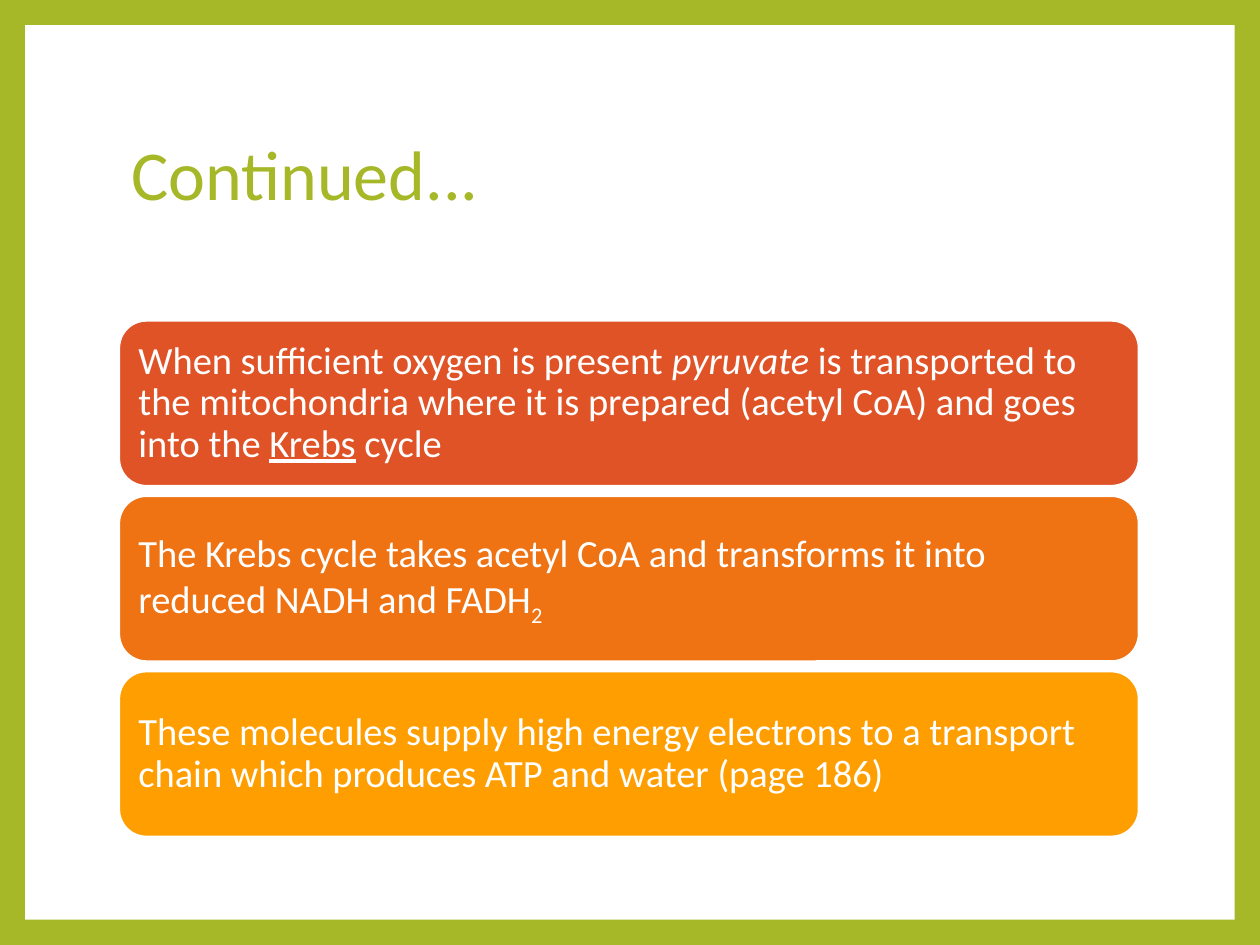
from pptx import Presentation
from pptx.dml.color import RGBColor
from pptx.enum.shapes import MSO_SHAPE
from pptx.enum.text import MSO_ANCHOR, PP_ALIGN
from pptx.util import Pt

RECT = MSO_SHAPE.RECTANGLE
ROUNDED = MSO_SHAPE.ROUNDED_RECTANGLE
MIDDLE = MSO_ANCHOR.MIDDLE
LEFT = PP_ALIGN.LEFT

COLORS = {
    "green": "A6B727",
    "white": "FFFFFF",
    "red": "DF5327",
    "orange": "EF7213",
    "amber": "FE9E00",
}
FONT = "Calibri"
MARGIN = 14.4
CONTENT_LEFT, CONTENT_WIDTH = 67.9, 583
CARD_TOP, CARD_HEIGHT, CARD_STEP = 183.1, 94.8, 100.2
CARD_INSET = 6.6

# Each card: fill colour and its runs as (text, format values)
CARDS = [
    ("red", [
        ("When sufficient oxygen is present ", {}),
        ("pyruvate", {"italic": True}),
        (" is transported to the mitochondria where it is prepared "
         "(acetyl CoA) and goes into the ", {}),
        ("Krebs", {"underline": True}),
        (" cycle", {}),
    ]),
    ("orange", [
        ("The Krebs cycle takes acetyl CoA and transforms it into "
         "reduced NADH and FADH", {}),
        ("2", {"baseline": -25000}),
    ]),
    ("amber", [
        ("These molecules supply high energy electrons to a transport "
         "chain which produces ATP and water (page 186)", {}),
    ]),
]


def rgb(name):
    return RGBColor.from_string(COLORS[name])


def add_run(p, text, size, color, baseline=None, **formats):
    r = p.add_run()
    r.text = text
    r.font.color.rgb = rgb(color)
    values = {"name": FONT, "size": Pt(size), **formats}
    for name, value in values.items():
        setattr(r.font, name, value)
    if baseline is not None:
        r._r.get_or_add_rPr().set("baseline", str(baseline))


def format_text(tf):
    """Set wrapping, anchor and paragraph layout; return the paragraph."""
    tf.word_wrap = True
    tf.vertical_anchor = MIDDLE
    p = tf.paragraphs[0]
    p.alignment = LEFT
    p.line_spacing = 0.9
    return p


def add_box(s, kind, left, top, width, height, fill):
    sp = s.shapes.add_shape(kind, Pt(left), Pt(top), Pt(width), Pt(height))
    sp.shadow.inherit = False
    sp.fill.solid()
    sp.fill.fore_color.rgb = rgb(fill)
    return sp


def add_panel(s, width, height):
    """Put the white panel behind everything, leaving a green frame."""
    panel = add_box(s, RECT, MARGIN, MARGIN,
                    width - 2 * MARGIN, height - 2 * MARGIN, "white")
    panel.line.fill.background()
    s.shapes._spTree.insert(2, panel._element)


def add_title(s, text):
    title = s.shapes.title
    box = {"left": CONTENT_LEFT, "top": 48.2,
           "width": CONTENT_WIDTH, "height": 106.6}
    for name, value in box.items():
        setattr(title, name, Pt(value))
    add_run(format_text(title.text_frame), text, 40, "green")


def add_card(s, top, fill, runs):
    card = add_box(s, ROUNDED, CONTENT_LEFT, top,
                   CONTENT_WIDTH, CARD_HEIGHT, fill)
    card.line.color.rgb = rgb("white")
    card.line.width = Pt(1.5)
    tf = card.text_frame
    for side in ("left", "top", "right", "bottom"):
        setattr(tf, f"margin_{side}", Pt(CARD_INSET))
    p = format_text(tf)
    for text, formats in runs:
        add_run(p, text, 22, "white", **formats)


def main():
    prs = Presentation()
    width, height = 720, 540
    prs.slide_width, prs.slide_height = Pt(width), Pt(height)
    s = prs.slides.add_slide(prs.slide_layouts[5])
    s.background.fill.solid()
    s.background.fill.fore_color.rgb = rgb("green")
    add_panel(s, width, height)
    add_title(s, "Continued...")
    for i, (fill, runs) in enumerate(CARDS):
        add_card(s, CARD_TOP + i * CARD_STEP, fill, runs)
    prs.save("out.pptx")


if __name__ == "__main__":
    main()
